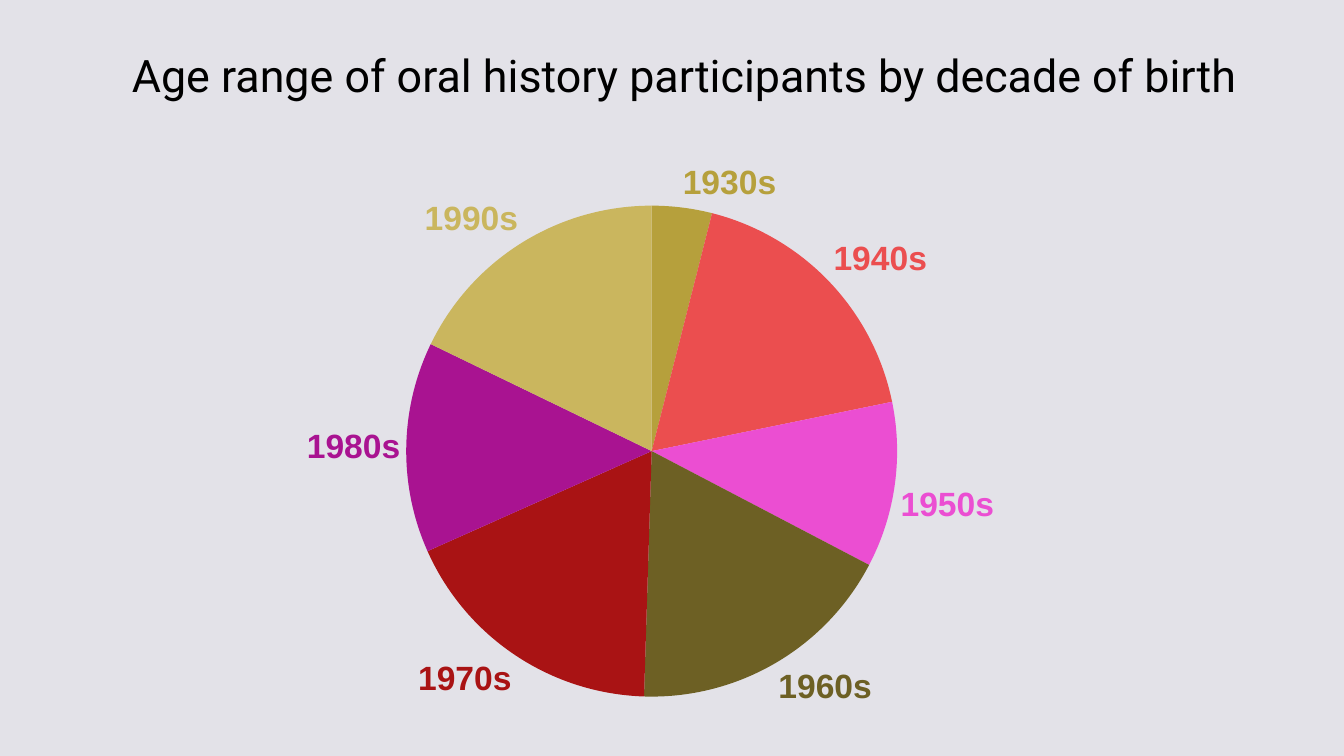
from dataclasses import dataclass

from lxml import etree
from pptx import Presentation
from pptx.chart.data import CategoryChartData
from pptx.dml.color import RGBColor
from pptx.enum.chart import XL_CHART_TYPE, XL_LABEL_POSITION
from pptx.enum.text import MSO_ANCHOR, PP_ALIGN
from pptx.oxml.ns import qn
from pptx.util import Cm, Pt

PIE = XL_CHART_TYPE.PIE
OUTSIDE_END = XL_LABEL_POSITION.OUTSIDE_END
CENTER = PP_ALIGN.CENTER
MIDDLE = MSO_ANCHOR.MIDDLE


@dataclass(frozen=True)
class Theme:
    background: str = "E3E2E8"
    text: str = "000000"
    title_font: str = "Roboto"
    chart_font: str = "Arial"
    title_size: int = 32
    label_size: int = 24
    base_size: int = 10


theme = Theme()

# Decade of birth: share in percent, slice colour
decades = {
    "1930s": (4, "B6A03C"),
    "1940s": (18, "EB4E4F"),
    "1950s": (11, "EB4ED2"),
    "1960s": (18, "6D6024"),
    "1970s": (18, "A91314"),
    "1980s": (14, "A91391"),
    "1990s": (18, "CAB65E"),
}


def style_font(font, size, name, color, bold=False):
    for attribute, value in {"size": Pt(size), "name": name, "bold": bold}.items():
        setattr(font, attribute, value)
    font.color.rgb = RGBColor.from_string(color)


# Slide and background
presentation = Presentation()
presentation.slide_width = Cm(33.87)
presentation.slide_height = Cm(19.05)
slide = presentation.slides.add_slide(presentation.slide_layouts[5])
slide.background.fill.solid()
slide.background.fill.fore_color.rgb = RGBColor.from_string(theme.background)

# Title
heading = slide.shapes.title
title_box = {"left": 2.03, "top": 1.07, "width": 30.45, "height": 1.63}
for side, length in title_box.items():
    setattr(heading, side, Cm(length))
heading.text_frame.text = "Age range of oral history participants by decade of birth"
heading.text_frame.vertical_anchor = MIDDLE
heading_line = heading.text_frame.paragraphs[0]
heading_line.alignment = CENTER
style_font(heading_line.runs[0].font, theme.title_size, theme.title_font, theme.text)

# Pie chart
shares = CategoryChartData()
shares.categories = list(decades)
shares.add_series("Series 1", [share for share, color in decades.values()])
pie = slide.shapes.add_chart(
    PIE, Cm(2.72), Cm(3.71), Cm(27.41), Cm(14.73), shares
).chart
pie.has_title = False
pie.has_legend = False
style_font(pie.font, theme.base_size, theme.chart_font, theme.text)
pie.plots[0].vary_by_categories = False
births = pie.plots[0].series[0]

# Category labels outside the pie
labels = births.data_labels
for attribute, value in {
    "show_value": False,
    "show_category_name": True,
    "position": OUTSIDE_END,
}.items():
    setattr(labels, attribute, value)
style_font(labels.font, theme.label_size, theme.chart_font, decades["1930s"][1], True)

# Each slice and its label share one colour
for index, (share, color) in enumerate(decades.values()):
    decade = births.points[index]
    decade.format.fill.solid()
    decade.format.fill.fore_color.rgb = RGBColor.from_string(color)
    decade.format.line.fill.background()
    style_font(decade.data_label.font, theme.label_size, theme.chart_font, color, True)
    decade.data_label.position = OUTSIDE_END

# Single labels show the decade rather than the share
for label in pie.element.iter(qn("c:dLbl")):
    label.find(qn("c:showVal")).set("val", "0")
    label.find(qn("c:showCatName")).set("val", "1")

# Place of the pie, as fractions of the chart
plot_area = pie.element.find(".//" + qn("c:plotArea"))
for old_layout in plot_area.findall(qn("c:layout")):
    plot_area.remove(old_layout)
layout = etree.Element(qn("c:layout"))
plot_area.insert(0, layout)
manual = etree.SubElement(layout, qn("c:manualLayout"))
for tag, value in {
    "layoutTarget": "inner",
    "xMode": "edge",
    "yMode": "edge",
    "x": "0.27",
    "y": "0.1",
    "w": "0.46",
    "h": "0.84",
}.items():
    etree.SubElement(manual, qn("c:" + tag)).set("val", value)

presentation.save("out.pptx")
